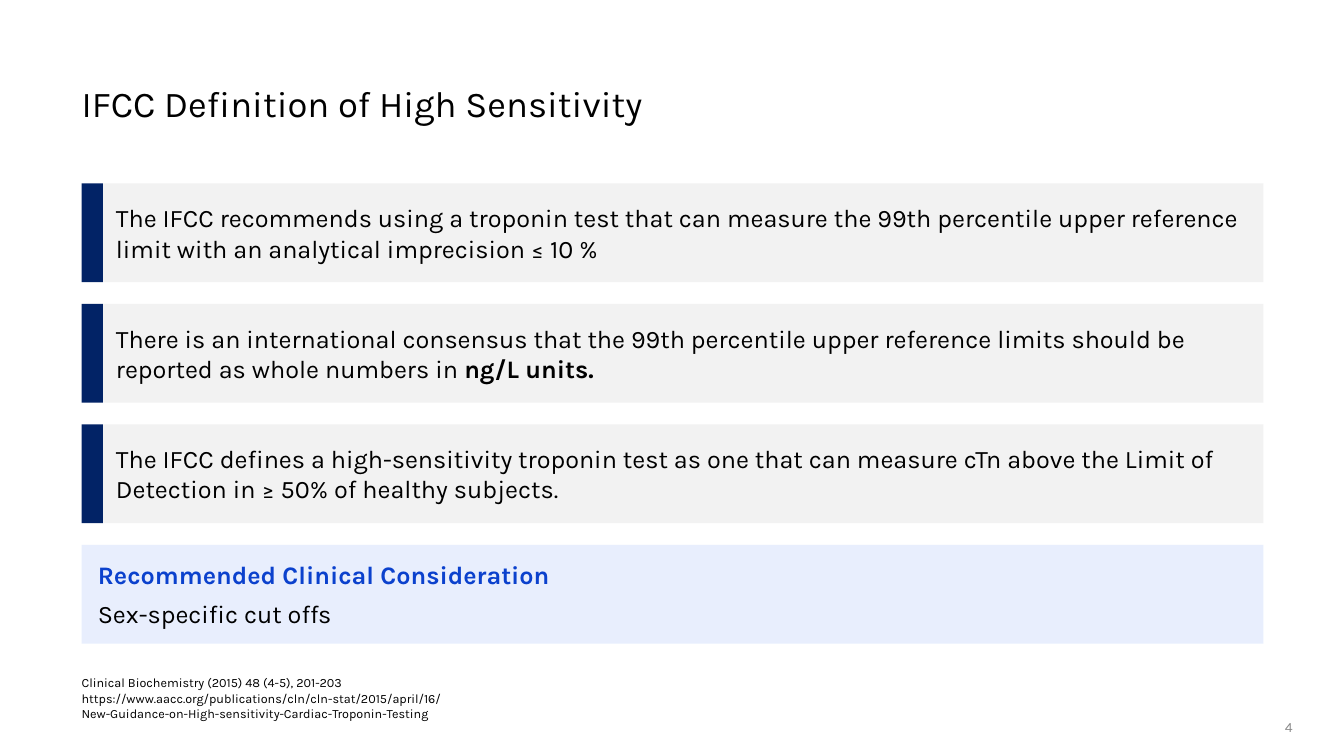
from dataclasses import dataclass

from lxml.etree import SubElement
from pptx import Presentation
from pptx.dml.color import RGBColor
from pptx.enum.shapes import MSO_SHAPE
from pptx.enum.text import MSO_ANCHOR, MSO_AUTO_SIZE, PP_ALIGN
from pptx.oxml.ns import qn
from pptx.util import Inches, Pt


@dataclass(frozen=True)
class Theme:
    font: str = "Karla"
    ink: str = "000000"
    muted: str = "888888"
    panel: str = "F2F2F2"
    accent: str = "022366"
    highlight: str = "C6D5FC"
    highlight_opacity: int = 40
    heading: str = "0B41CD"
    title_size: int = 26
    body_size: int = 18
    source_size: int = 9
    number_size: int = 10


LEFT, CONTENT_WIDTH = 0.81, 11.72
CARD_TOP, CARD_HEIGHT, CARD_PITCH = 1.82, 0.98, 1.195
ACCENT_WIDTH = 0.21

# Each statement is a plain part followed by a bold part.
STATEMENTS = [
    ("The IFCC recommends using a troponin test that can measure the 99th "
     "percentile upper reference limit with an analytical imprecision ≤ 10 %", ""),
    ("There is an international consensus that the 99th percentile upper "
     "reference limits should be reported as whole numbers in ", "ng/L units."),
    ("The IFCC defines a high-sensitivity troponin test as one that can measure "
     "cTn above the Limit of Detection in ≥ 50% of healthy subjects.", ""),
]
SOURCES = [
    "Clinical Biochemistry (2015) 48 (4-5), 201-203",
    "https://www.aacc.org/publications/cln/cln-stat/2015/april/16/\v"
    "New-Guidance-on-High-sensitivity-Cardiac-Troponin-Testing",
]


class SlideBuilder:
    def __init__(self, slide, theme):
        self.slide = slide
        self.theme = theme

    def style(self, paragraph, size, color, bold=False, align=PP_ALIGN.LEFT):
        paragraph.alignment = align
        font = paragraph.font
        font.name, font.size, font.bold = self.theme.font, Pt(size), bold
        font.color.rgb = RGBColor.from_string(color)

    def frame(self, shape, anchor, inset_x=0, inset_y=0):
        """Set wrapping, anchor and insets, and return the text frame."""
        frame = shape.text_frame
        frame.word_wrap = True
        frame.auto_size = MSO_AUTO_SIZE.NONE
        frame.vertical_anchor = anchor
        frame.margin_left = frame.margin_right = Inches(inset_x)
        frame.margin_top = frame.margin_bottom = Inches(inset_y)
        return frame

    def title(self, text):
        title = self.slide.shapes.title
        title.left, title.top = Inches(LEFT), Inches(0.85)
        title.width, title.height = Inches(10.89), Inches(0.37)
        paragraph = self.frame(title, MSO_ANCHOR.TOP).paragraphs[0]
        paragraph.text = text
        paragraph.line_spacing = 0.9
        self.style(paragraph, self.theme.title_size, self.theme.ink)

    def rectangle(self, shapes, left, top, width, color):
        box = shapes.add_shape(MSO_SHAPE.RECTANGLE, Inches(left), Inches(top),
                               Inches(width), Inches(CARD_HEIGHT))
        box.shadow.inherit = False
        box.fill.solid()
        box.fill.fore_color.rgb = RGBColor.from_string(color)
        box.line.fill.background()
        return box

    def statement(self, top, plain, bold):
        card = self.slide.shapes.add_group_shape().shapes
        panel = self.rectangle(card, LEFT + ACCENT_WIDTH, top,
                               CONTENT_WIDTH - ACCENT_WIDTH, self.theme.panel)
        self.rectangle(card, LEFT, top, ACCENT_WIDTH, self.theme.accent)
        paragraph = self.frame(panel, MSO_ANCHOR.MIDDLE, 0.13, 0.07).paragraphs[0]
        paragraph.text = plain
        self.style(paragraph, self.theme.body_size, self.theme.ink)
        if bold:
            emphasis = paragraph.add_run()
            emphasis.text = bold
            emphasis.font.bold = True

    def consideration(self, top, heading, text):
        theme = self.theme
        panel = self.rectangle(self.slide.shapes, LEFT, top, CONTENT_WIDTH,
                               theme.highlight)
        color = panel.fill._xPr.find(qn("a:solidFill"))[0]
        SubElement(color, qn("a:alpha"), val=str(theme.highlight_opacity * 1000))
        frame = self.frame(panel, MSO_ANCHOR.MIDDLE, 0.16, 0.05)
        lead = frame.paragraphs[0]
        lead.text = heading
        self.style(lead, theme.body_size, theme.heading, bold=True)
        detail = frame.add_paragraph()
        detail.text = text
        detail.space_before = detail.space_after = Pt(6)
        self.style(detail, theme.body_size, theme.ink)

    def note(self, bounds, lines, size, color, anchor, align=PP_ALIGN.LEFT):
        box = self.slide.shapes.add_textbox(*map(Inches, bounds))
        frame = self.frame(box, anchor)
        frame.text = "\n".join(lines)
        for paragraph in frame.paragraphs:
            self.style(paragraph, size, color, align=align)


def main():
    deck = Presentation()
    deck.slide_width, deck.slide_height = Inches(13.33), Inches(7.5)
    theme = Theme()
    title_only = deck.slide_layouts[5]
    builder = SlideBuilder(deck.slides.add_slide(title_only), theme)

    builder.title("IFCC Definition of High Sensitivity")
    builder.note((LEFT, 6.7, 11.97, 0.45), SOURCES, theme.source_size,
                 theme.ink, MSO_ANCHOR.BOTTOM)
    for row, (plain, bold) in enumerate(STATEMENTS):
        builder.statement(CARD_TOP + row * CARD_PITCH, plain, bold)
    builder.consideration(CARD_TOP + len(STATEMENTS) * CARD_PITCH,
                          "Recommended Clinical Consideration",
                          "Sex-specific cut offs")
    builder.note((12.27, 7.13, 0.55, 0.17), ["4"], theme.number_size,
                 theme.muted, MSO_ANCHOR.MIDDLE, PP_ALIGN.RIGHT)
    deck.save("out.pptx")


if __name__ == "__main__":
    main()
